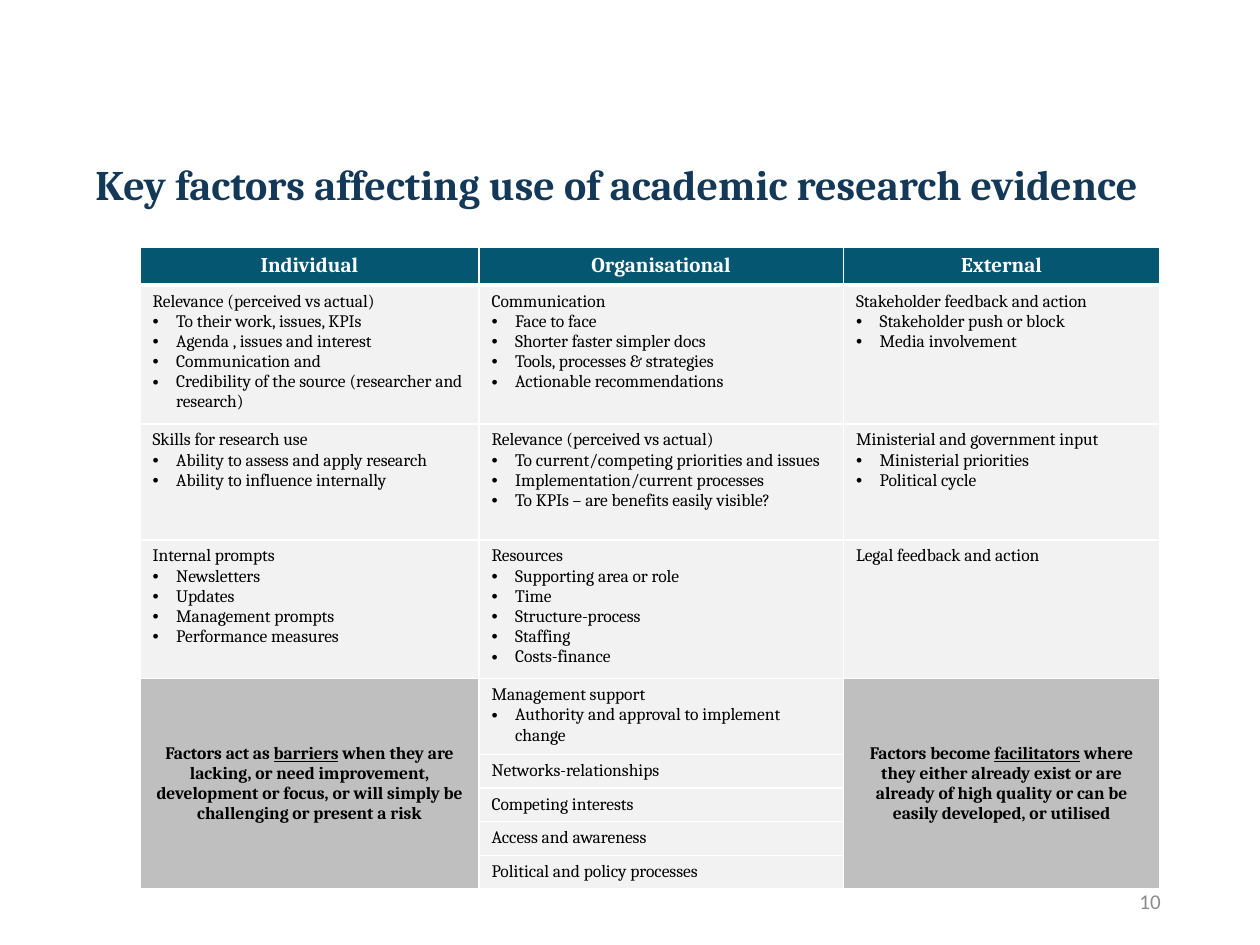
from dataclasses import dataclass

from lxml.etree import SubElement
from pptx import Presentation
from pptx.dml.color import RGBColor
from pptx.enum.text import MSO_ANCHOR, PP_ALIGN
from pptx.oxml import parse_xml
from pptx.oxml.ns import nsdecls, qn
from pptx.util import Pt


@dataclass(frozen=True)
class Theme:
    title: str = "143858"
    head: str = "055671"
    body: str = "F2F2F2"
    note: str = "BFBFBF"
    white: str = "FFFFFF"
    black: str = "000000"
    grey: str = "8C8C8C"
    serif: str = "Cambria"
    sans: str = "Calibri"
    big: int = 24
    mid: int = 12
    small: int = 10


theme = Theme()


def add_run(para, text, size, color, bold=False, under=False, face=theme.serif):
    run = para.add_run()
    run.text = text
    font = run.font
    font.name, font.size, font.bold = face, Pt(size), bold
    font.underline = under or None
    font.color.rgb = RGBColor.from_string(color)


def style_cell(cell, fill, base=1):
    cell.fill.solid()
    cell.fill.fore_color.rgb = RGBColor.from_string(fill)
    # Borders come before the fill in the cell properties
    props = cell._tc.get_or_add_tcPr()
    for spot, side in enumerate(("L", "R", "T", "B")):
        width = Pt(base if side == "B" else 1)
        props.insert(spot, parse_xml(
            f'<a:ln{side} {nsdecls("a")} w="{width}"><a:solidFill>'
            f'<a:srgbClr val="{theme.white}"/></a:solidFill></a:ln{side}>'))


deck = Presentation()
deck.slide_width, deck.slide_height = Pt(720), Pt(540)
slide = deck.slides.add_slide(deck.slide_layouts[6])

# Title and page number
labels = [
    ((47.5, 75.6, 648, 58.3), "Key factors affecting use of academic research evidence",
     PP_ALIGN.LEFT, theme.big, theme.title, True, theme.serif),
    ((508.3, 500.4, 162, 28.8), "10",
     PP_ALIGN.RIGHT, theme.mid, theme.grey, False, theme.sans),
]
for place, text, align, size, color, bold, face in labels:
    frame = slide.shapes.add_textbox(*map(Pt, place)).text_frame
    frame.word_wrap = True
    frame.vertical_anchor = MSO_ANCHOR.MIDDLE
    para = frame.paragraphs[0]
    para.alignment = align
    add_run(para, text, size, color, bold, face=face)

# Table grid
cols = [193.7, 208.3, 180.7]
rows = [21.2, 76, 66.3, 76.6, 41.8] + [18.8] * 4
table = slide.shapes.add_table(
    len(rows), len(cols), Pt(80), Pt(141.2), Pt(sum(cols)), Pt(sum(rows))).table
for col, width in zip(table.columns, cols):
    col.width = Pt(width)
for row, height in zip(table.rows, rows):
    row.height = Pt(height)

# Header row
for col, name in enumerate(["Individual", "Organisational", "External"]):
    cell = table.cell(0, col)
    style_cell(cell, theme.head, 3)
    para = cell.text_frame.paragraphs[0]
    para.alignment = PP_ALIGN.CENTER
    add_run(para, name, theme.mid, theme.white, True)

# Factors by column: each cell is a lead line, then its bullets
factors = [
    [
        ["Relevance (perceived vs actual)", "To their work, issues, KPIs",
         "Agenda , issues and interest", "Communication and",
         "Credibility of the source (researcher and research)"],
        ["Skills for research use", "Ability to assess and apply research",
         "Ability to influence internally"],
        ["Internal prompts", "Newsletters", "Updates", "Management prompts",
         "Performance measures"],
    ],
    [
        ["Communication", "Face to face", "Shorter faster simpler docs",
         "Tools, processes & strategies", "Actionable recommendations"],
        ["Relevance (perceived vs actual)",
         "To current/competing priorities and issues",
         "Implementation/current processes",
         "To KPIs – are benefits easily visible?"],
        ["Resources", "Supporting area or role", "Time", "Structure-process",
         "Staffing", "Costs-finance"],
        ["Management support", "Authority and approval to implement change"],
        ["Networks-relationships"],
        ["Competing interests"],
        ["Access and awareness"],
        ["Political and policy processes"],
    ],
    [
        ["Stakeholder feedback and action", "Stakeholder push or block",
         "Media involvement"],
        ["Ministerial and government input", "Ministerial priorities",
         "Political cycle"],
        ["Legal feedback and action"],
    ],
]
for col, cells in enumerate(factors):
    for row, lines in enumerate(cells, 1):
        cell = table.cell(row, col)
        style_cell(cell, theme.body)
        frame = cell.text_frame
        for num, line in enumerate(lines):
            para = frame.add_paragraph() if num else frame.paragraphs[0]
            if num:
                props = para._p.get_or_add_pPr()
                props.set("marL", str(Pt(13.5)))
                props.set("indent", str(Pt(-13.5)))
                SubElement(props, qn("a:buFont")).set("typeface", "Arial")
                SubElement(props, qn("a:buChar")).set("char", "•")
            add_run(para, line, theme.small, theme.black)

# Merged summary cells
notes = {
    0: ("Factors act as ", "barriers",
        " when they are lacking, or need improvement, development or focus, "
        "or will simply be challenging or present a risk"),
    2: ("Factors become ", "facilitators",
        " where they either already exist or are already of high quality "
        "or can be easily developed, or utilised"),
}
for col, parts in notes.items():
    for row in range(4, len(rows)):
        style_cell(table.cell(row, col), theme.note)
    cell = table.cell(4, col)
    cell.merge(table.cell(len(rows) - 1, col))
    cell.vertical_anchor = MSO_ANCHOR.MIDDLE
    para = cell.text_frame.paragraphs[0]
    para.alignment = PP_ALIGN.CENTER
    for num, part in enumerate(parts):
        add_run(para, part, theme.small, theme.black, True, num == 1)

deck.save("out.pptx")
